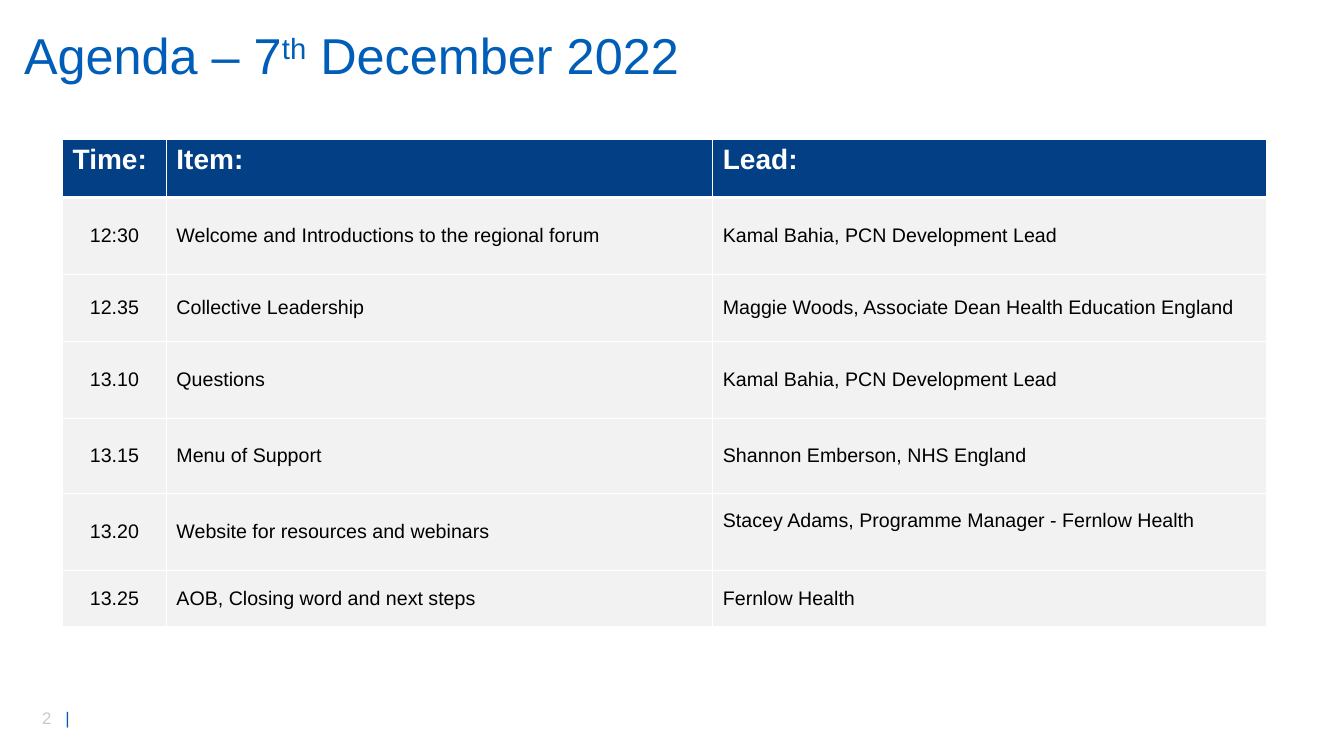
import pptx
import pptx.dml.color
import pptx.enum.text
import pptx.oxml.ns
import pptx.util
from lxml import etree

Inches, Pt = pptx.util.Inches, pptx.util.Pt
ALIGN, ANCHOR = pptx.enum.text.PP_ALIGN, pptx.enum.text.MSO_ANCHOR
qn = pptx.oxml.ns.qn
COLORS = {"blue": "005EB8", "navy": "033F85", "band": "F2F2F2",
          "white": "FFFFFF", "black": "000000", "grey": "C9C9C9"}


def rgb(name):
    return pptx.dml.color.RGBColor.from_string(COLORS[name])


def add_text(p, text, size=14, color="black", bold=False, baseline=0):
    r = p.add_run()
    r.text = text
    r.font.name, r.font.size, r.font.bold = "Arial", Pt(size), bold
    r.font.color.rgb = rgb(color)
    if baseline:
        r.font._element.set("baseline", str(baseline * 1000))


prs = pptx.Presentation()
prs.slide_width, prs.slide_height = Inches(13.33), Inches(7.5)
s = prs.slides.add_slide(prs.slide_layouts[6])

# Page number, with a tab before the bar
tf = s.shapes.add_textbox(Inches(0.32), Inches(6.97), Inches(0.71), Inches(0.3)).text_frame
tf.word_wrap = True
p = tf.paragraphs[0]
tabs = etree.SubElement(p._p.get_or_add_pPr(), qn("a:tabLst"))
etree.SubElement(tabs, qn("a:tab"), pos=str(Inches(0.23)), algn="l")
add_text(p, "2\t", size=12, color="grey")
add_text(p, "|", size=12, color="blue")

# Title
tf = s.shapes.add_textbox(Inches(0.14), Inches(0.24), Inches(11.64), Inches(0.67)).text_frame
tf.word_wrap = True
tf.vertical_anchor = ANCHOR.MIDDLE
p = tf.paragraphs[0]
p.line_spacing = 0.9
for text, baseline in [("Agenda – 7", 0), ("th", 30), (" December 2022", 0)]:
    add_text(p, text, size=36, color="blue", baseline=baseline)

# Agenda table
agenda = [
    ("Time:", "Item:", "Lead:"),
    ("12:30", "Welcome and Introductions to the regional forum", "Kamal Bahia, PCN Development Lead"),
    ("12.35", "Collective Leadership", "Maggie Woods, Associate Dean Health Education England"),
    ("13.10", "Questions", "Kamal Bahia, PCN Development Lead"),
    ("13.15", "Menu of Support", "Shannon Emberson, NHS England"),
    ("13.20", "Website for resources and webinars", "Stacey Adams, Programme Manager - Fernlow Health"),
    ("13.25", "AOB, Closing word and next steps", "Fernlow Health"),
]
col_widths = [1.03, 5.42, 5.49]
row_heights = [0.58, 0.76, 0.67, 0.76, 0.75, 0.76, 0.56]
table = s.shapes.add_table(len(agenda), len(col_widths), Inches(0.62), Inches(1.38),
                           Inches(sum(col_widths)), Inches(sum(row_heights))).table
for column, width in zip(table.columns, col_widths):
    column.width = Inches(width)
for row, height in zip(table.rows, row_heights):
    row.height = Inches(height)

for i, entry in enumerate(agenda):
    header = i == 0
    for j, text in enumerate(entry):
        cell = table.cell(i, j)
        cell.fill.solid()
        cell.fill.fore_color.rgb = rgb("navy" if header else "band")
        p = cell.text_frame.paragraphs[0]
        if header:
            add_text(p, text, size=20, color="white", bold=True)
        else:
            cell.vertical_anchor = ANCHOR.MIDDLE
            p.alignment = ALIGN.CENTER if j == 0 else ALIGN.LEFT
            add_text(p, text)

        # White borders, thicker under the header
        widths = {"lnL": 1, "lnR": 1, "lnT": 3 if i == 1 else 1, "lnB": 3 if header else 1}
        tcPr = cell._tc.get_or_add_tcPr()
        for k, (side, width) in enumerate(widths.items()):
            ln = etree.Element(qn("a:" + side), w=str(Pt(width)))
            fill = etree.SubElement(ln, qn("a:solidFill"))
            etree.SubElement(fill, qn("a:srgbClr"), val=COLORS["white"])
            tcPr.insert(k, ln)

# The webinar lead sits a little above the middle of its row
table.cell(5, 2).margin_bottom = Inches(0.27)

prs.save("out.pptx")
